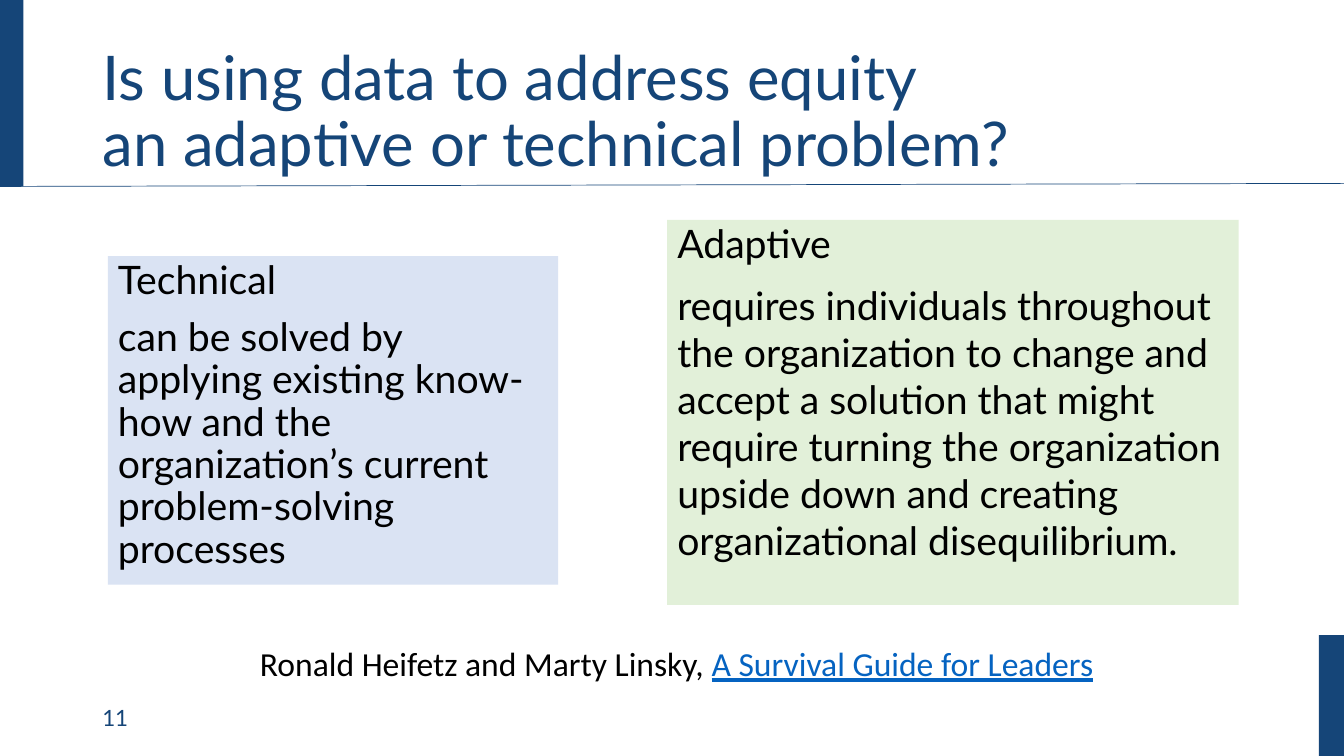
from lxml.etree import SubElement
from pptx import Presentation
from pptx.dml.color import RGBColor
from pptx.enum.shapes import MSO_CONNECTOR as CONNECTOR, MSO_SHAPE as SHAPE
from pptx.enum.text import MSO_ANCHOR as ANCHOR, MSO_AUTO_SIZE as AUTO_SIZE, PP_ALIGN as ALIGN
from pptx.oxml.ns import qn
from pptx.util import Pt

COLORS = {
    "navy": "154578",
    "technical": "DAE3F3",
    "adaptive": "E2F0D9",
    "text": "000000",
    "link": "0563C1",
}


def color(name):
    return RGBColor.from_string(COLORS[name])


def place(shape, left, top, width, height):
    shape.left, shape.top = Pt(left), Pt(top)
    shape.width, shape.height = Pt(width), Pt(height)


def style(font, size, color_name, name="Lato"):
    font.name, font.size = name, Pt(size)
    font.color.rgb = color(color_name)


def add_bar(page, left, top, width, height):
    bar = page.shapes.add_shape(SHAPE.RECTANGLE, Pt(left), Pt(top), Pt(width), Pt(height))
    bar.shadow.inherit = False
    bar.fill.solid()
    bar.fill.fore_color.rgb = color("navy")
    bar.line.fill.background()


def add_rule(page, x1, y1, x2, y2):
    rule = page.shapes.add_connector(CONNECTOR.STRAIGHT, Pt(x1), Pt(y1), Pt(x2), Pt(y2))
    rule.line.color.rgb = color("navy")
    rule.line.width = Pt(0.5)
    SubElement(rule._element.spPr, qn("a:effectLst"))


def set_title(title, text):
    place(title, 66, 28.8, 828, 104.4)
    frame = title.text_frame
    frame.text = text
    frame.auto_size = AUTO_SIZE.NONE
    frame.vertical_anchor = ANCHOR.MIDDLE
    para = frame.paragraphs[0]
    para.alignment = ALIGN.LEFT
    para.line_spacing = 0.9
    for span in para.runs:
        style(span.font, 44, "navy")


def fill_panel(panel, bounds, fill, heading, definition, spacing):
    """Write a heading and its definition, without bullets, on a tinted panel."""
    place(panel, *bounds)
    panel.fill.solid()
    panel.fill.fore_color.rgb = color(fill)
    frame = panel.text_frame
    frame.text = f"{heading}\n{definition}"
    frame.auto_size = AUTO_SIZE.NONE
    for para, before, lines in zip(frame.paragraphs, (0, 10), (0.9, spacing)):
        properties = para._p.get_or_add_pPr()
        properties.set("marL", "0")
        properties.set("indent", "0")
        SubElement(properties, qn("a:buNone"))
        para.space_before = Pt(before)
        para.line_spacing = lines
        style(para.runs[0].font, 28, "text")


def add_text(page, left, top, width, height):
    box = page.shapes.add_textbox(Pt(left), Pt(top), Pt(width), Pt(height))
    box.text_frame.word_wrap = True
    return box.text_frame


def add_page_number(page, number):
    frame = add_text(page, 66, 498.24, 216, 28.8)
    frame.vertical_anchor = ANCHOR.MIDDLE
    frame.text = number
    style(frame.paragraphs[0].runs[0].font, 16, "navy")


def add_citation(page, authors, work):
    frame = add_text(page, 178.56, 455.76, 630.72, 58.32)
    frame.auto_size = AUTO_SIZE.SHAPE_TO_FIT_TEXT
    para = frame.paragraphs[0]
    for text, color_name in ((authors, "text"), (work, "link")):
        span = para.add_run()
        span.text = text
        style(span.font, 24, color_name, "Calibri")
    span.font.underline = True


def main():
    deck = Presentation()
    deck.slide_width, deck.slide_height = Pt(960), Pt(540)
    page = deck.slides.add_slide(deck.slide_layouts.get_by_name("Two Content"))
    title, technical, adaptive = list(page.placeholders)[:3]

    add_bar(page, 0, 0, 16.8, 133.2)
    add_rule(page, 0, 133.2, 960, 131)
    add_bar(page, 942, 453.6, 18, 86.4)
    add_page_number(page, "11")
    set_title(title, "Is using data to address equity\van adaptive or technical problem?")
    fill_panel(
        technical, (77, 182.9, 321.8, 234.7), "technical", "Technical",
        "can be solved by applying existing know-how and the organization’s "
        "current problem-solving processes", 0.9)
    fill_panel(
        adaptive, (476.6, 157, 408.2, 275), "adaptive", "Adaptive",
        "requires individuals throughout the organization to change and accept "
        "a solution that might require turning the organization upside down "
        "and creating organizational disequilibrium.", 1.0)
    add_citation(page, "Ronald Heifetz and Marty Linsky, ", "A Survival Guide for Leaders")
    deck.save("out.pptx")


if __name__ == "__main__":
    main()
